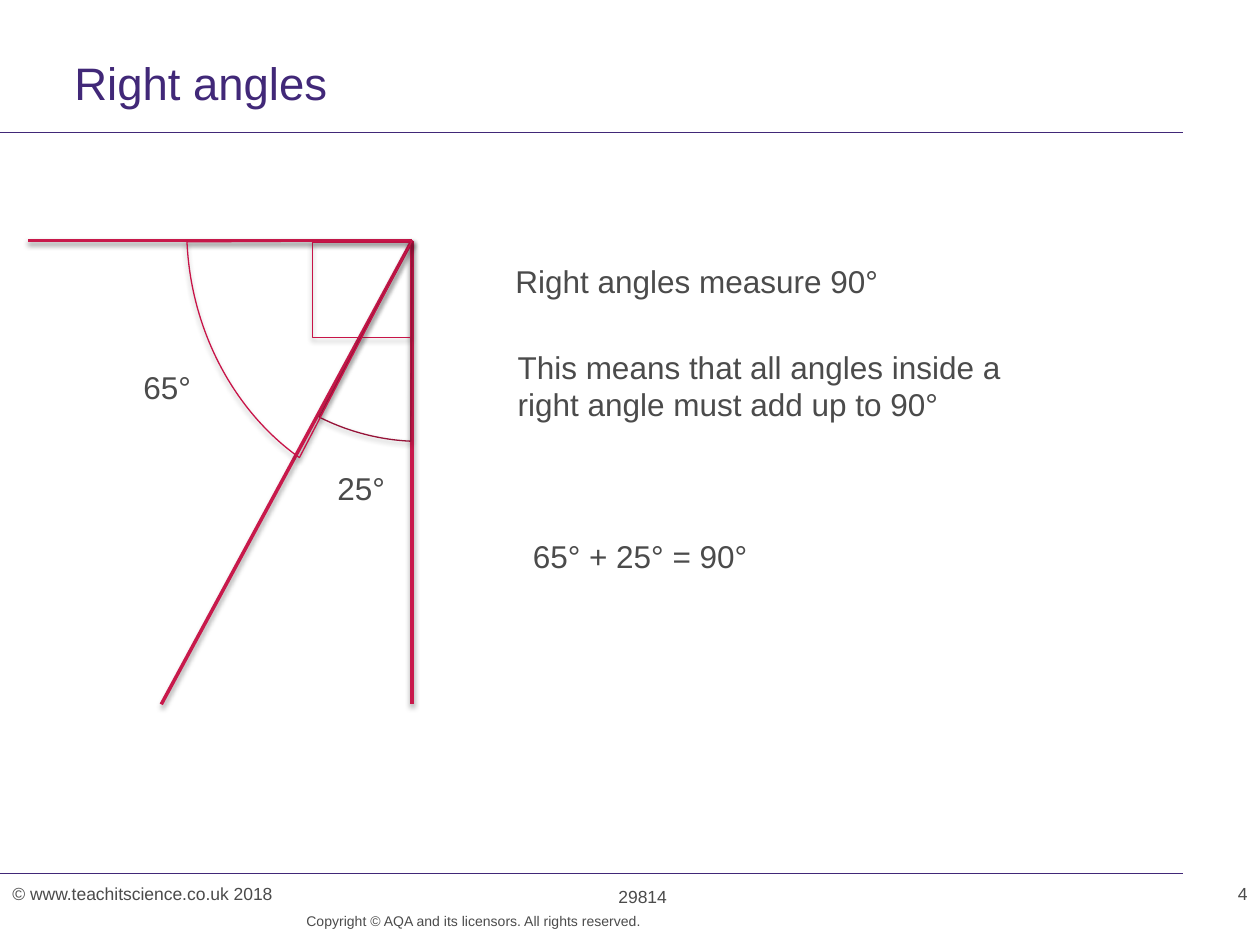
from lxml.etree import SubElement
from pptx import Presentation
from pptx.dml.color import RGBColor
from pptx.enum.shapes import MSO_CONNECTOR, MSO_SHAPE
from pptx.enum.text import MSO_ANCHOR, MSO_AUTO_SIZE, PP_ALIGN
from pptx.oxml.ns import qn
from pptx.util import Inches, Pt

PURPLE, GREY = "412878", "4B4B4B"
RAY_RED, ANGLE_RED, DARK_RED = "C8194B", "C81448", "961338"


def write(box, text, size, color=GREY, align=PP_ALIGN.LEFT, spacing=None, inset=None):
    frame = box.text_frame
    frame.vertical_anchor = MSO_ANCHOR.TOP
    frame.word_wrap = True
    frame.auto_size = MSO_AUTO_SIZE.NONE
    if inset is not None:
        frame.margin_left = frame.margin_top = frame.margin_bottom = 0
        frame.margin_right = Inches(inset)
    para = frame.paragraphs[0]
    para.alignment = align
    if spacing:
        para.line_spacing = Pt(spacing)
    span = para.add_run()
    span.text = text
    span.font.name = "Arial"
    span.font.size = Pt(size)
    span.font.color.rgb = RGBColor.from_string(color)


def outline(shape, color, width, opacity=0, distance=0):
    shape.line.color.rgb = RGBColor.from_string(color)
    shape.line.width = Pt(width)
    effects = SubElement(shape._element.spPr, qn("a:effectLst"))
    if opacity:
        shadow = SubElement(effects, qn("a:outerShdw"), blurRad=str(Pt(3.1)),
                            dist=str(Pt(distance)), dir="5400000", rotWithShape="0")
        black = SubElement(shadow, qn("a:srgbClr"), val="000000")
        SubElement(black, qn("a:alpha"), val=str(opacity * 1000))


deck = Presentation()
deck.slide_width, deck.slide_height = Inches(10), Inches(7.5)
page = deck.slides.add_slide(deck.slide_layouts[5])

title = page.shapes.title
title.left, title.top = Inches(0.59), Inches(0.48)
title.width, title.height = Inches(8.8), Inches(0.47)
write(title, "Right angles", 26, PURPLE, spacing=28, inset=0.1)

for y in (1.05, 6.93):
    rule = page.shapes.add_connector(MSO_CONNECTOR.STRAIGHT, 0, Inches(y), Inches(9.39), Inches(y))
    outline(rule, PURPLE, 0.6)

for left, top, text, align in (
    (0, 6.96, "© www.teachitscience.co.uk 2018", PP_ALIGN.LEFT),
    (3.19, 6.98, "29814", PP_ALIGN.CENTER),
    (6.18, 6.96, "4", PP_ALIGN.RIGHT),
):
    footer = page.shapes.add_textbox(Inches(left), Inches(top), Inches(3.82), Inches(0.27))
    write(footer, text, 10, align=align)

rights = page.shapes.add_textbox(Inches(2.16), Inches(7.24), Inches(2.93), Inches(0.26))
write(rights, "Copyright © AQA and its licensors. All rights reserved.", 8,
      align=PP_ALIGN.RIGHT, spacing=10, inset=0)

fact = page.shapes.add_textbox(Inches(4.09), Inches(2.08), Inches(8.8), Inches(0.54))
write(fact, "Right angles measure 90°", 18, inset=0.1)

corner_x, corner_y = Inches(3.27), Inches(1.91)
for end_x, end_y in ((0.22, 1.91), (3.27, 5.59), (1.28, 5.59)):
    ray = page.shapes.add_connector(MSO_CONNECTOR.STRAIGHT, corner_x, corner_y,
                                    Inches(end_x), Inches(end_y))
    outline(ray, RAY_RED, 2, 38, 1.6)

for kind, left, top, width, height, rotation, angles, color, opacity, distance in (
    (MSO_SHAPE.RECTANGLE, 2.49, 1.91, 0.76, 0.78, 90, (), ANGLE_RED, 35, 1.8),
    (MSO_SHAPE.PIE, 1.58, 0.33, 3.38, 3.16, 200, (150.23, 166.65), DARK_RED, 38, 1.6),
    (MSO_SHAPE.PIE, 1.22, 0.13, 4.1, 3.56, 260.6, (130.09, 167.47), ANGLE_RED, 35, 1.8),
):
    marker = page.shapes.add_shape(kind, Inches(left), Inches(top), Inches(width), Inches(height))
    marker.rotation = rotation
    for index, angle in enumerate(angles):
        marker.adjustments[index] = angle
    marker.fill.background()
    outline(marker, color, 0.75, opacity, distance)

for left, top, width, height, text, wraps in (
    (4.01, 2.71, 4.2, 0.71,
     "This means that all angles inside a right angle must add up to 90°", True),
    (1.04, 2.87, 0.71, 0.71, "65°", True),
    (2.58, 3.67, 0.58, 0.71, "25°", False),
    (4.13, 4.21, 1.92, 0.4, "65° + 25° = 90°", False),
):
    label = page.shapes.add_textbox(Inches(left), Inches(top), Inches(width), Inches(height))
    write(label, text, 18)
    label.text_frame.word_wrap = wraps

deck.save("out.pptx")
